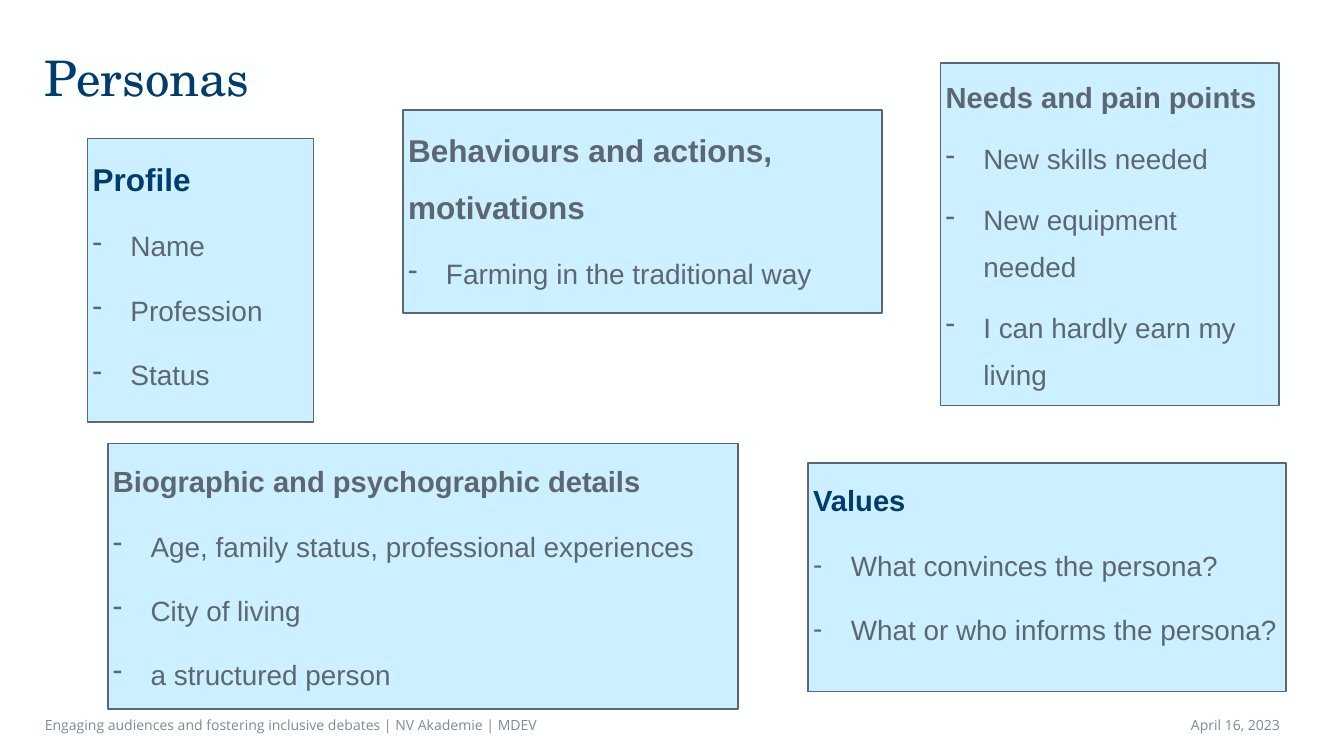
import pptx
import pptx.dml.color
import pptx.enum.shapes
import pptx.enum.text
import pptx.oxml.ns
import pptx.util
from lxml import etree

Cm = pptx.util.Cm
Pt = pptx.util.Pt
ALIGN = pptx.enum.text.PP_ALIGN
ANCHOR = pptx.enum.text.MSO_ANCHOR

COLOURS = {
    "background": "FEFFFF",
    "navy": "003D6D",
    "slate": "5D676F",
    "grey": "808A93",
    "card": "CCF0FF",
}

VALUES = {
    "box": (40.72, 23.32, 24.08, 11.53),
    "heading": "Values",
    "heading_colour": "navy",
    "items": ["What convinces the persona?", "What or who informs the persona?"],
}

CARDS = [
    {
        "box": (5.44, 22.35, 31.75, 13.39),
        "heading": "Biographic and psychographic details",
        "items": [
            "Age, family status, professional experiences",
            "City of living",
            "a structured person",
        ],
    },
    {
        "box": (20.32, 5.54, 24.13, 10.24),
        "heading": "Behaviours and actions, motivations",
        "items": ["Farming in the traditional way"],
        "sizes": (45, 40),
    },
    {
        "box": (4.42, 6.99, 11.38, 14.27),
        "heading": "Profile",
        "heading_colour": "navy",
        "items": ["Name", "Profession", "Status"],
        "sizes": (45, 40),
    },
    {
        "box": (47.4, 3.18, 17.04, 17.25),
        "heading": "Needs and pain points",
        "items": ["New skills needed", "New equipment needed", "I can hardly earn my living"],
        "line_spacing": 1.4,
    },
]


def colour(name):
    """Return the named palette colour."""
    return pptx.dml.color.RGBColor.from_string(COLOURS[name])


def place(shape, box):
    """Move and size a shape to a box given in centimetres."""
    shape.left, shape.top, shape.width, shape.height = (Cm(length) for length in box)


def prepare_frame(shape, anchor):
    """Clear the text frame of a shape and fix its wrapping, margins and anchor."""
    frame = shape.text_frame
    frame.clear()
    frame.word_wrap = True
    frame.auto_size = pptx.enum.text.MSO_AUTO_SIZE.NONE
    frame.vertical_anchor = anchor
    frame.margin_left = frame.margin_right = Cm(0.25)
    frame.margin_top = frame.margin_bottom = Cm(0.13)
    return frame


def add_text(paragraph, text, font, size, colour_name, bold=False):
    """Add one formatted run to a paragraph."""
    run = paragraph.add_run()
    run.text = text
    run.font.name = font
    run.font.size = Pt(size)
    run.font.bold = bold
    run.font.color.rgb = colour(colour_name)


def set_bullet(paragraph, character=None, indent=0):
    """Give a paragraph a hanging bullet, or none."""
    properties = paragraph._p.get_or_add_pPr()
    properties.set("marL", str(Cm(indent)))
    properties.set("indent", str(-Cm(indent)))
    tag = "a:buChar" if character else "a:buNone"
    bullet = etree.SubElement(properties, pptx.oxml.ns.qn(tag))
    if character:
        bullet.set("char", character)


def fill_card(shape, box, heading, items, heading_colour="slate", sizes=(41.6, 39.8), line_spacing=1.5):
    """Style a shape as a card with a bold heading and a dashed list."""
    place(shape, box)
    shape.fill.solid()
    shape.fill.fore_color.rgb = colour("card")
    shape.line.color.rgb = colour("slate")
    shape.line.width = Pt(2.25)
    frame = prepare_frame(shape, ANCHOR.TOP)
    for index, text in enumerate([heading, *items]):
        is_heading = index == 0
        paragraph = frame.paragraphs[0] if is_heading else frame.add_paragraph()
        paragraph.alignment = ALIGN.LEFT
        paragraph.line_spacing = line_spacing
        paragraph.space_before = Pt(20)
        if is_heading:
            set_bullet(paragraph)
            add_text(paragraph, text, "Arial", sizes[0], heading_colour, bold=True)
        else:
            set_bullet(paragraph, "-", 1.9)
            add_text(paragraph, text, "Arial", sizes[1], "slate")


def add_card(slide, card):
    """Add a rectangle and fill it as a card."""
    left, top, width, height = (Cm(length) for length in card["box"])
    shape = slide.shapes.add_shape(
        pptx.enum.shapes.MSO_SHAPE.RECTANGLE, left, top, width, height
    )
    shape.shadow.inherit = False
    fill_card(shape, **card)


def fill_title(shape, box, text):
    """Place and format the slide title."""
    place(shape, box)
    paragraph = prepare_frame(shape, ANCHOR.TOP).paragraphs[0]
    paragraph.alignment = ALIGN.LEFT
    paragraph.line_spacing = Pt(91)
    add_text(paragraph, text, "TeX Gyre Schola", 70, "navy")


def add_footer(slide, box, text, date):
    """Add the footer text at the left and the date at the right of a box."""
    left, top, width, height = box
    date_width = 12
    parts = [
        (text, left, 39.62, ALIGN.LEFT),
        (date, left + width - date_width, date_width, ALIGN.RIGHT),
    ]
    for content, part_left, part_width, alignment in parts:
        shape = slide.shapes.add_textbox(Cm(part_left), Cm(top), Cm(part_width), Cm(height))
        paragraph = prepare_frame(shape, ANCHOR.MIDDLE).paragraphs[0]
        paragraph.alignment = alignment
        add_text(paragraph, content, "Open Sans", 20, "grey")


def main():
    """Build and save the personas slide."""
    presentation = pptx.Presentation()
    presentation.slide_width = Cm(67.72)
    presentation.slide_height = Cm(38.1)
    slide = presentation.slides.add_slide(presentation.slide_layouts[1])
    slide.background.fill.solid()
    slide.background.fill.fore_color.rgb = colour("background")
    fill_title(slide.shapes.title, (2.01, 2.01, 62.76, 3.25), "Personas")
    fill_card(slide.placeholders[1], **VALUES)
    add_footer(
        slide,
        (2.01, 35.74, 62.74, 1.6),
        "Engaging audiences and fostering inclusive debates | NV Akademie | MDEV",
        "April 16, 2023",
    )
    for card in CARDS:
        add_card(slide, card)
    presentation.save("out.pptx")


if __name__ == "__main__":
    main()
